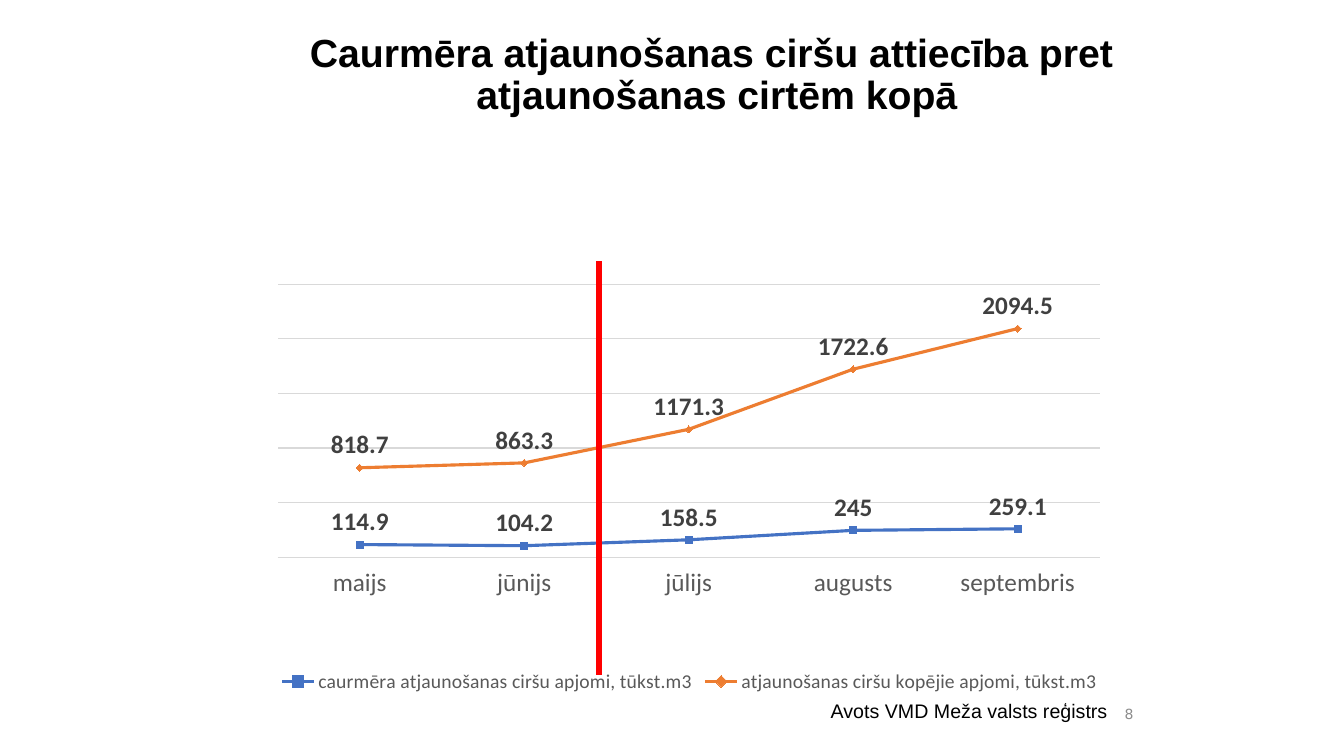
from lxml import etree
from pptx import Presentation
from pptx.chart.data import CategoryChartData
from pptx.dml.color import RGBColor
from pptx.enum.chart import XL_CHART_TYPE as CT, XL_LABEL_POSITION as LP
from pptx.enum.chart import XL_LEGEND_POSITION as LegendPos, XL_TICK_MARK as Tick
from pptx.enum.chart import XL_TICK_LABEL_POSITION as TickLabels
from pptx.enum.shapes import MSO_CONNECTOR as Conn
from pptx.enum.text import MSO_ANCHOR as Anchor, PP_ALIGN as Align
from pptx.oxml import parse_xml
from pptx.oxml.ns import nsdecls, qn
from pptx.util import Inches, Pt

COLORS = {
    "text": "000000", "number": "8C8C8C", "axis": "595959", "label": "404040",
    "grid": "D9D9D9", "average": "4472C4", "total": "ED7D31", "divider": "FF0000",
}
MONTHS = ["maijs", "jūnijs", "jūlijs", "augusts", "septembris"]
SERIES = [
    ("caurmēra atjaunošanas ciršu apjomi, tūkst.m3", "average",
     [114.9, 104.2, 158.5, 245, 259.1]),
    ("atjaunošanas ciršu kopējie apjomi, tūkst.m3", "total",
     [818.7, 863.3, 1171.3, 1722.6, 2094.5]),
]


def rgb(name):
    return RGBColor.from_string(COLORS[name])


def style_font(font, size, color, name="Calibri", bold=False):
    font.size, font.name, font.bold = Pt(size), name, bold
    font.color.rgb = rgb(color)


def style_line(line, color, width):
    line.color.rgb = rgb(color)
    line.width = Pt(width)


def add_text(s, box, lines, size, color="text", font="Arial", bold=False,
             align=Align.LEFT, anchor=Anchor.TOP, spacing=1.0):
    tf = s.shapes.add_textbox(*map(Inches, box)).text_frame
    tf.word_wrap = True
    tf.vertical_anchor = anchor
    p = tf.paragraphs[0]
    p.alignment, p.line_spacing = align, spacing
    for i, line in enumerate(lines):
        if i:
            p.add_line_break()
        r = p.add_run()
        r.text = line
        style_font(r.font, size, color, font, bold)


def manual_layout(x, y, w, h, inner=False):
    """Build a c:layout element from fractions of the chart area."""
    target = '<c:layoutTarget val="inner"/>' if inner else ""
    return parse_xml(
        f'<c:layout {nsdecls("c")}><c:manualLayout>{target}'
        '<c:xMode val="edge"/><c:yMode val="edge"/>'
        f'<c:x val="{x}"/><c:y val="{y}"/><c:w val="{w}"/><c:h val="{h}"/>'
        '</c:manualLayout></c:layout>')


def place_plot(chart, layout):
    plot_area = chart.plots[0]._element.getparent()
    old = plot_area.find(qn("c:layout"))
    if old is not None:
        plot_area.remove(old)
    plot_area.insert(0, layout)


def add_volume_chart(s, box):
    data = CategoryChartData()
    data.categories = MONTHS
    for name, _, values in SERIES:
        data.add_series(name, values)
    chart = s.shapes.add_chart(CT.LINE, *map(Inches, box), data).chart
    chart.has_title = False
    style_font(chart.font, 10, "text")
    place_plot(chart, manual_layout(0.028, 0.167, 0.942, 0.55, inner=True))

    chart.has_legend = True
    legend = chart.legend
    legend.position = LegendPos.BOTTOM
    legend.include_in_layout = False
    style_font(legend.font, 14, "axis")
    legend._element.find(qn("c:legendPos")).addnext(
        manual_layout(0.03, 0.06, 0.94, 0.08))

    months = chart.category_axis
    months.major_tick_mark = months.minor_tick_mark = Tick.NONE
    months.tick_label_position = TickLabels.LOW
    style_font(months.tick_labels.font, 18, "axis")
    style_line(months.format.line, "grid", 0.75)
    volumes = chart.value_axis
    volumes.minimum_scale, volumes.maximum_scale, volumes.major_unit = 0, 2500, 500
    volumes.visible = False
    style_line(volumes.major_gridlines.format.line, "grid", 0.75)

    for series, (_, color, _) in zip(chart.plots[0].series, SERIES):
        series.smooth = False
        series.marker.style = None
        style_line(series.format.line, color, 2.25)
        labels = series.data_labels
        labels.show_value, labels.position = True, LP.ABOVE
        style_font(labels.font, 18, "label", bold=True)


def add_divider(s, x, top, bottom):
    line = s.shapes.add_connector(Conn.STRAIGHT, *map(Inches, (x, top, x, bottom)))
    style_line(line.line, "divider", 4)
    etree.SubElement(line._element.spPr, qn("a:effectLst"))


def build_slide(prs):
    s = prs.slides.add_slide(prs.slide_layouts[6])
    add_text(s, (2.88, 0.28, 8.46, 1.38),
             ["Caurmēra atjaunošanas ciršu attiecība pret ", "atjaunošanas cirtēm kopā"],
             28, bold=True, align=Align.CENTER, spacing=0.9)
    add_text(s, (10.83, 6.92, 0.51, 0.33), ["8"], 10, "number", "DejaVu Sans",
             align=Align.RIGHT, anchor=Anchor.MIDDLE)
    add_volume_chart(s, (2.51, 2, 8.66, 4.92))
    add_divider(s, 5.94, 2.59, 6.7)
    add_text(s, (8.14, 6.88, 3.29, 0.34), ["Avots VMD Meža valsts reģistrs"], 14)


def main():
    prs = Presentation()
    prs.slide_width, prs.slide_height = Inches(13.33), Inches(7.5)
    build_slide(prs)
    prs.save("out.pptx")


if __name__ == "__main__":
    main()
